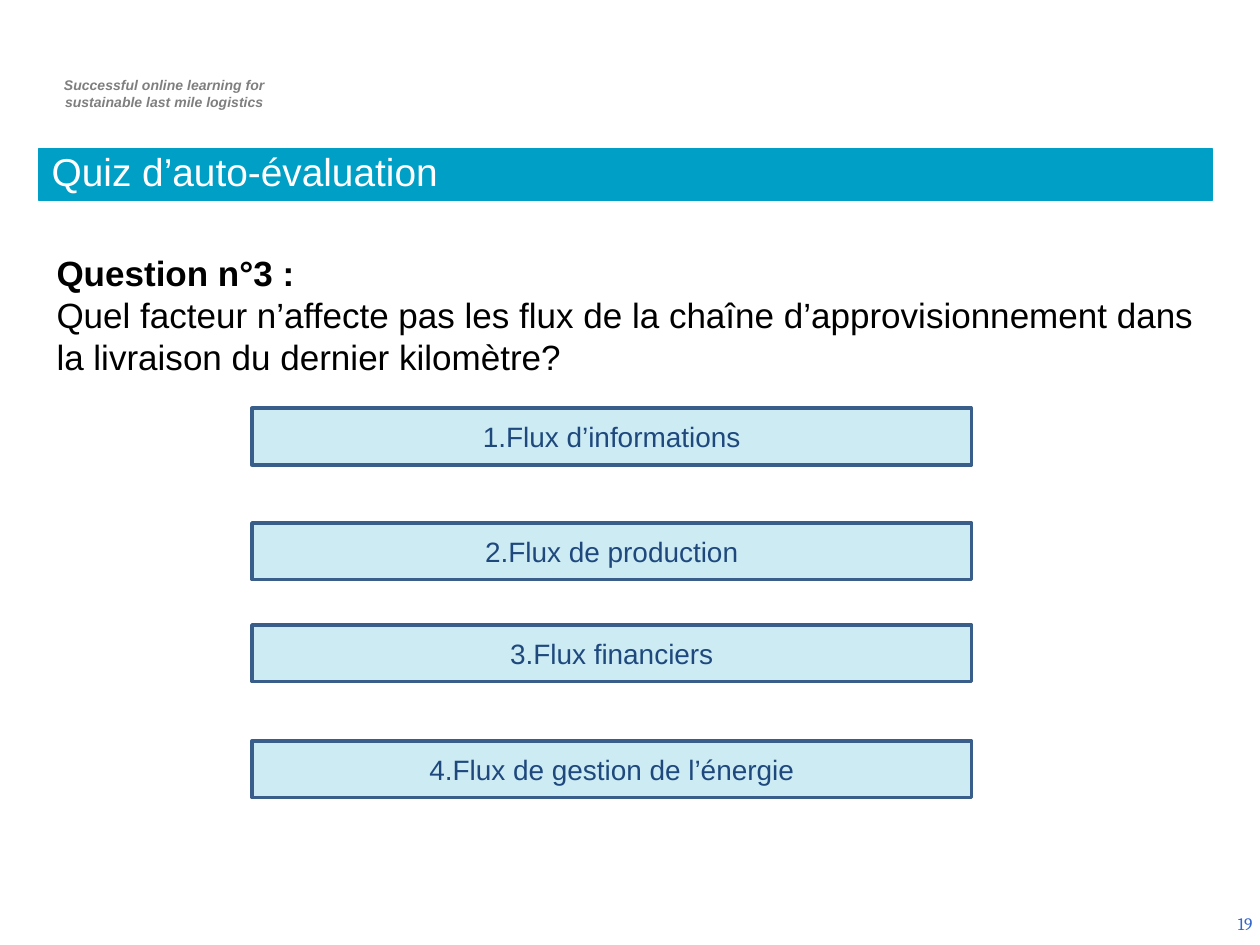
import pptx
import pptx.util
import pptx.dml.color
import pptx.enum.shapes
import pptx.enum.text
import pptx.oxml.ns
from lxml import etree

Pt = pptx.util.Pt
ALIGN = pptx.enum.text.PP_ALIGN
ANCHOR = pptx.enum.text.MSO_ANCHOR

BLUE = "009FC6"
TAGLINE = dict(name="Arial", size=Pt(8), bold=True, italic=True, color="7F7F7F")
TITLE = dict(name="Arial", size=Pt(22.2), color="FFFFFF")
HEADING = dict(name="Arial", size=Pt(20), bold=True, color="000000")
QUESTION = {**HEADING, "bold": False}
ANSWER = dict(name="Arial", size=Pt(16), color="1F497D")
NUMBER = dict(name="Cambria", size=Pt(10), color="3366CC")

ANSWERS = [
    (233.28, "1.Flux d’informations"),
    (298.8, "2.Flux de production"),
    (357.12, "3.Flux financiers"),
    (423.36, "4.Flux de gestion de l’énergie"),
]


def rgb(value):
    return pptx.dml.color.RGBColor.from_string(value)


def write(shape, lines, align=ALIGN.LEFT, anchor=ANCHOR.TOP):
    """Fill a shape with one paragraph for each (text, format) pair."""
    frame = shape.text_frame
    frame.word_wrap = True
    frame.auto_size = pptx.enum.text.MSO_AUTO_SIZE.NONE
    frame.vertical_anchor = anchor
    for index, (text, style) in enumerate(lines):
        para = frame.add_paragraph() if index else frame.paragraphs[0]
        para.alignment = align
        span = para.add_run()
        span.text = text
        for key, value in style.items():
            if key == "color":
                span.font.color.rgb = rgb(value)
            else:
                setattr(span.font, key, value)


def paint(shape, fill, line, width):
    shape.fill.solid()
    shape.fill.fore_color.rgb = rgb(fill)
    shape.line.color.rgb = rgb(line)
    shape.line.width = Pt(width)


def add_text(page, left, top, width, height, lines, **layout):
    box = page.shapes.add_textbox(Pt(left), Pt(top), Pt(width), Pt(height))
    write(box, lines, **layout)


def add_title(page, text):
    title = page.shapes.title
    title.left, title.top = Pt(22.32), Pt(84.96)
    title.width, title.height = Pt(670.32), Pt(29.52)
    paint(title, BLUE, BLUE, 0.75)
    write(title, [(text, TITLE)], anchor=ANCHOR.BOTTOM)
    title.text_frame.paragraphs[0].line_spacing = 0.8


def add_answer(page, top, text):
    box = page.shapes.add_shape(pptx.enum.shapes.MSO_SHAPE.RECTANGLE,
                                Pt(144), Pt(top), Pt(411.12), Pt(32.4))
    box.shadow.inherit = False
    paint(box, BLUE, "395E89", 2)
    # Let the fill show at 20 % opacity
    color = box.fill._xPr.find(".//" + pptx.oxml.ns.qn("a:srgbClr"))
    etree.SubElement(color, pptx.oxml.ns.qn("a:alpha"), val="20000")
    write(box, [(text, ANSWER)], ALIGN.CENTER, ANCHOR.MIDDLE)


def main():
    deck = pptx.Presentation()
    deck.slide_width, deck.slide_height = Pt(720), Pt(540)
    page = deck.slides.add_slide(deck.slide_layouts[5])

    # Header and page number
    add_text(page, 20.88, 40.32, 146.16, 26.64,
             [("Successful online learning for", TAGLINE),
              ("sustainable last mile logistics", TAGLINE)],
             align=ALIGN.CENTER)
    add_title(page, "Quiz d’auto-évaluation")
    add_text(page, 555.12, 513.36, 167.76, 28.8, [("19", NUMBER)],
             align=ALIGN.RIGHT, anchor=ANCHOR.MIDDLE)

    # Question
    add_text(page, 25.2, 140.4, 670.32, 104.4,
             [("Question n°3 :", HEADING),
              ("Quel facteur n’affecte pas les flux de la chaîne "
               "d’approvisionnement dans la livraison du dernier kilomètre?",
               QUESTION)])

    # Answer choices
    for top, text in ANSWERS:
        add_answer(page, top, text)

    deck.save("out.pptx")


if __name__ == "__main__":
    main()
